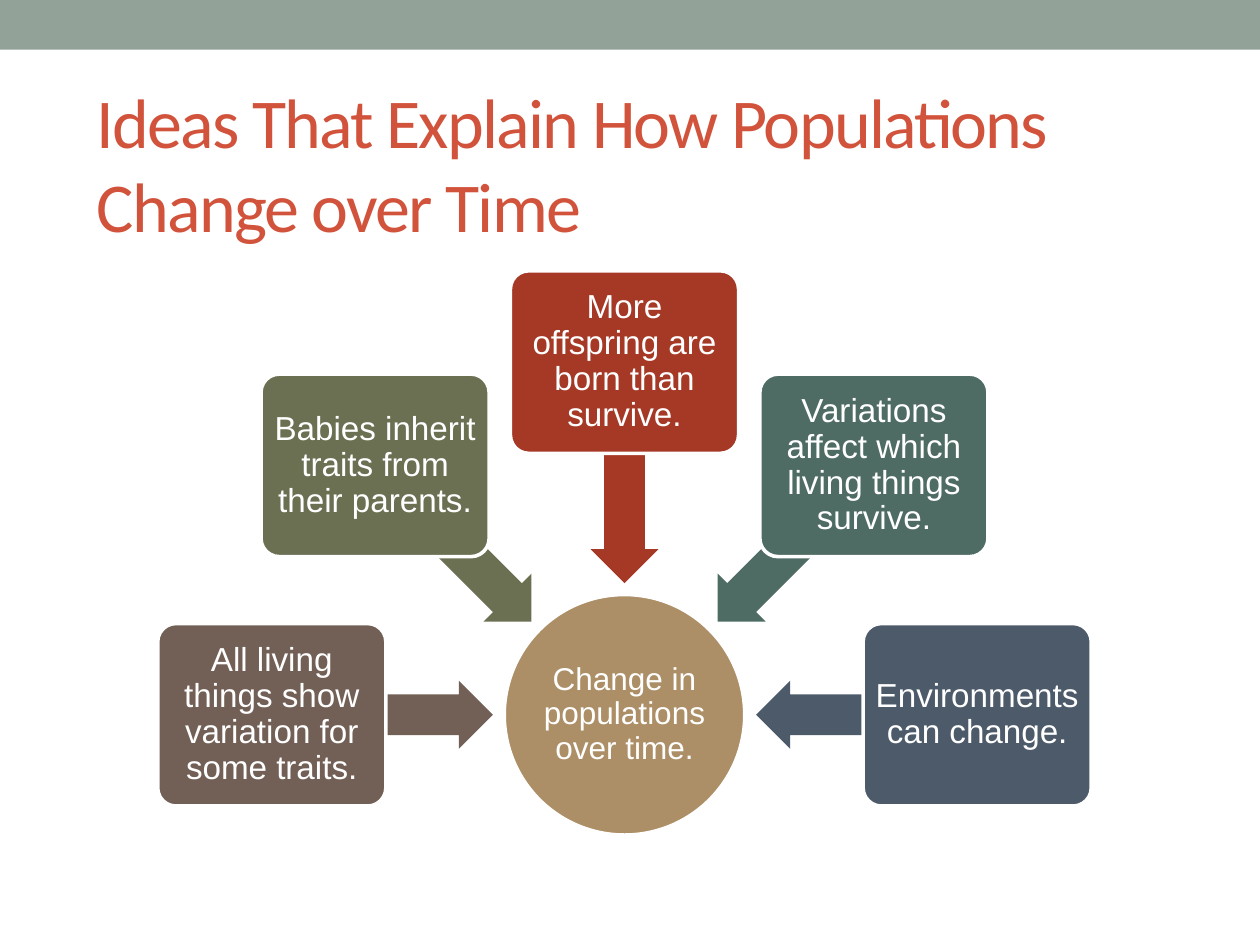
from math import cos, radians, sin

from pptx import Presentation
from pptx.dml.color import RGBColor
from pptx.enum.shapes import MSO_SHAPE as SHAPE
from pptx.enum.text import MSO_ANCHOR as ANCHOR, MSO_AUTO_SIZE as AUTO_SIZE, PP_ALIGN as ALIGN
from pptx.util import Cm, Pt

COLORS = {
    "bar": "93A299",
    "title": "D2533C",
    "white": "FFFFFF",
    "hub": "AD8F67",
    "brown": "726056",
    "olive": "6C7053",
    "red": "A53926",
    "teal": "4E6C64",
    "slate": "4C5A6A",
}
IDEAS = [
    ("All living things show variation for some traits.", "brown"),
    ("Babies inherit traits from their parents.", "olive"),
    ("More offspring are born than survive.", "red"),
    ("Variations affect which living things survive.", "teal"),
    ("Environments can change.", "slate"),
]
HUB_X, HUB_Y, HUB_SIZE = 12.59, 14.41, 4.85
BOX_RADIUS, BOX_W, BOX_H = 7.11, 4.6, 3.68
ARROW_RADIUS, ARROW_W, ARROW_H = 4.88, 4.45, 1.37


def rgb(name):
    return RGBColor.from_string(COLORS[name])


def write_text(sp, text, size, color="white", font="Arial", align=ALIGN.CENTER,
               inset=None, line_spacing=None, tracking=None):
    tf = sp.text_frame
    tf.word_wrap = True
    tf.auto_size = AUTO_SIZE.NONE
    tf.vertical_anchor = ANCHOR.MIDDLE
    if inset is not None:
        tf.margin_left = tf.margin_right = tf.margin_top = tf.margin_bottom = Cm(inset)
    p = tf.paragraphs[0]
    p.alignment = align
    p.line_spacing = line_spacing
    r = p.add_run()
    r.text = text
    r.font.name = font
    r.font.size = Pt(size)
    r.font.color.rgb = rgb(color)
    if tracking is not None:
        r.font._element.set("spc", str(tracking * 100))


def add_centered(s, kind, x, y, w, h, fill, outlined=False):
    sp = s.shapes.add_shape(kind, Cm(x - w / 2), Cm(y - h / 2), Cm(w), Cm(h))
    sp.shadow.inherit = False
    sp.fill.solid()
    sp.fill.fore_color.rgb = rgb(fill)
    if outlined:
        sp.line.color.rgb = rgb("white")
        sp.line.width = Pt(2.08)
    else:
        sp.line.fill.background()
    return sp


def around_hub(angle, radius):
    return HUB_X + radius * cos(radians(angle)), HUB_Y + radius * sin(radians(angle))


def add_title(s, text):
    title = s.shapes.title
    title.left, title.top, title.width, title.height = Cm(1.7), Cm(1.9), Cm(22.43), Cm(2.74)
    write_text(title, text, 40, color="title", font="Calibri", align=ALIGN.LEFT, tracking=-1)


def add_hub(s, text):
    sp = add_centered(s, SHAPE.OVAL, HUB_X, HUB_Y, HUB_SIZE, HUB_SIZE, "hub", outlined=True)
    write_text(sp, text, 18, inset=0.03, line_spacing=0.9)


def add_idea(s, text, color, angle):
    arrow = add_centered(s, SHAPE.LEFT_ARROW, *around_hub(angle, ARROW_RADIUS),
                         ARROW_W, ARROW_H, color)
    arrow.adjustments[0] = 0.6
    arrow.adjustments[1] = 0.5
    arrow.rotation = angle % 360
    box = add_centered(s, SHAPE.ROUNDED_RECTANGLE, *around_hub(angle, BOX_RADIUS),
                       BOX_W, BOX_H, color, outlined=True)
    box.adjustments[0] = 0.1
    write_text(box, text, 19, inset=0.1, line_spacing=0.9)


def main():
    prs = Presentation()
    prs.slide_width, prs.slide_height = Cm(25.4), Cm(19.05)
    s = prs.slides.add_slide(prs.slide_layouts[5])
    add_centered(s, SHAPE.RECTANGLE, 12.7, 0.5, 25.4, 1, "bar")
    add_title(s, "Ideas That Explain How Populations Change over Time")
    add_hub(s, "Change in populations over time.")
    for i, (text, color) in enumerate(IDEAS):
        add_idea(s, text, color, 180 + 45 * i)
    prs.save("out.pptx")


if __name__ == "__main__":
    main()
